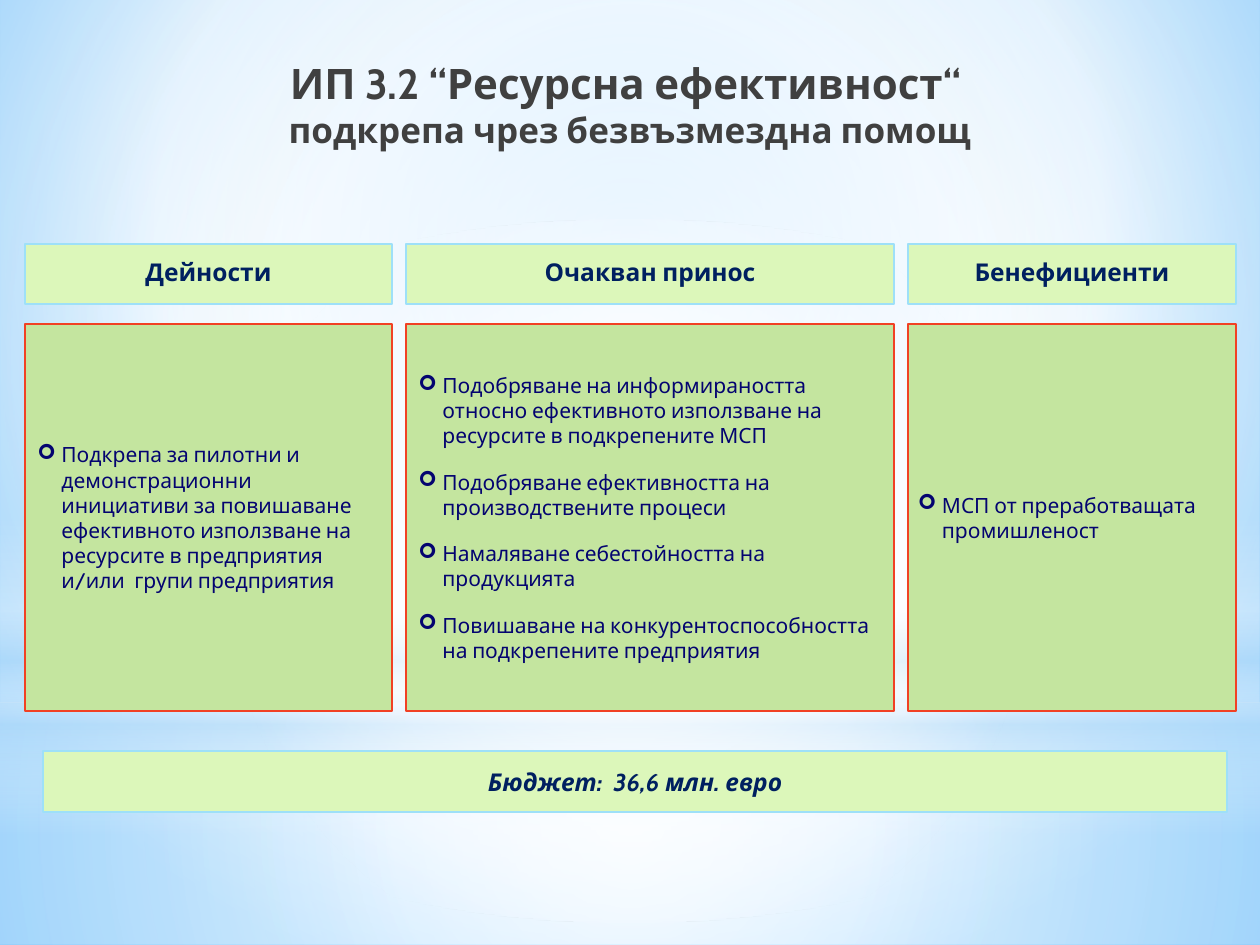
import pptx
import pptx.util
import pptx.oxml
import pptx.oxml.ns
import pptx.dml.color
import pptx.enum.shapes
import pptx.enum.text

PX = 7257  # EMU per px, 126 px to the inch
FONT = "Cabin"
Pt = pptx.util.Pt
hue = pptx.dml.color.RGBColor.from_string
kinds = pptx.enum.shapes.MSO_SHAPE
MID = pptx.enum.text.MSO_ANCHOR.MIDDLE
align = pptx.enum.text.PP_ALIGN
NS = pptx.oxml.ns.nsdecls("a")


def blend(stops, to=None):
    """Gradient fill from (position, colour, opacity); radial if to is given."""
    marks = "".join(
        f'<a:gs pos="{pos * 1000}"><a:srgbClr val="{tint}">'
        f'<a:alpha val="{part * 1000}"/></a:srgbClr></a:gs>'
        for pos, tint, part in stops)
    way = '<a:lin ang="5400000" scaled="0"/>'
    if to:
        rect = " ".join(f'{side}="{n * 1000}"' for side, n in zip("ltrb", to))
        way = f'<a:path path="circle"><a:fillToRect {rect}/></a:path>'
    return pptx.oxml.parse_xml(
        f'<a:gradFill {NS} rotWithShape="1"><a:gsLst>{marks}</a:gsLst>{way}</a:gradFill>')


def box(area, fill, edge, width, lines, font, para, pads=()):
    """Filled rectangle with one paragraph for each line."""
    shape = slide.shapes.add_shape(kinds.RECTANGLE, *[n * PX for n in area])
    shape.shadow.inherit = False
    shape.fill.solid()
    shape.fill.fore_color.rgb = hue(fill)
    shape.line.color.rgb = hue(edge)
    shape.line.width = Pt(width)
    frame = shape.text_frame
    frame.word_wrap = True
    frame.vertical_anchor = MID
    for name, pad in pads:
        setattr(frame, name, pad * PX)
    for i, line in enumerate(lines):
        p = frame.add_paragraph() if i else frame.paragraphs[0]
        run = p.add_run()
        run.text = line
        run.font.color.rgb = hue(font["tint"])
        for name, value in font["set"].items():
            setattr(run.font, name, value)
        for name, value in para.items():
            setattr(p, name, value)
    return shape


deck = pptx.Presentation()
deck.slide_width, deck.slide_height = 1260 * PX, 945 * PX
slide = deck.slides.add_slide(deck.slide_layouts[5])

# Background
back = slide.background.fill
back.solid()
back.fore_color.rgb = hue("FFFFFF")
solid = slide.element.find(".//" + pptx.oxml.ns.qn("a:solidFill"))
solid.getparent().replace(solid, blend(
    [(0, "9ED5FF", 100), (60, "FFFFFF", 100), (100, "5BB9FF", 100)], (20, 10, 20, 60)))

# Soft light over the background
mid = (50, 50, 50, 50)
glows = [
    (kinds.RECTANGLE, 703, 242, mid,
     [(0, "FFFFFF", 91), (37, "FFFFFF", 76), (100, "B4DCFA", 79)]),
    (kinds.RECTANGLE, 0, 703, mid,
     [(0, "FFFFFF", 89), (48, "FFFFFF", 62), (100, "B4DCFA", 79)]),
    (kinds.RECTANGLE, 519, 315, None,
     [(0, "FFFFFF", 0), (29, "FFFFFF", 30), (45, "B4DCFA", 40),
      (55, "FFFFFF", 26), (65, "B4DCFA", 60), (100, "FFFFFF", 0)]),
    (kinds.OVAL, 220, 703, mid, [(0, "FFFFFF", 100), (56, "FFFFFF", 0)]),
]
for kind, top, high, to, stops in glows:
    glow = slide.shapes.add_shape(kind, 0, top * PX, 1260 * PX, high * PX)
    glow.shadow.inherit = False
    glow.line.fill.background()
    geom = glow.element.spPr.find(pptx.oxml.ns.qn("a:prstGeom"))
    geom.addnext(blend(stops, to))

# Title, brought in front of the light
title = slide.shapes.title
title.left, title.top, title.width, title.height = 0, 45 * PX, 1260 * PX, 118 * PX
title.element.getparent().append(title.element)
title.text_frame.vertical_anchor = MID
head = title.text_frame.paragraphs[0]
head.alignment = align.CENTER
for text, size in [("ИП 3.2 “Ресурсна ефективност“ ", 24),
                   ("подкрепа чрез безвъзмездна помощ", 20)]:
    if head.runs:
        head.add_line_break()
    run = head.add_run()
    run.text = text
    run.font.color.rgb = hue("404040")
    for name, value in {"name": FONT, "size": Pt(size), "bold": True}.items():
        setattr(run.font, name, value)

# Text styles
bold = {"tint": "002060", "set": {"name": FONT, "size": Pt(14), "bold": True}}
slant = {"tint": "002060", "set": {**bold["set"], "italic": True}}
plain = {"tint": "040470", "set": {"name": FONT, "size": Pt(12)}}

# Columns: width, heading, points, space before, insets
cols = [
    (367, "Дейности",
     ["Подкрепа за пилотни и демонстрационни инициативи за повишаване ефективното "
      "използване на ресурсите в предприятия и/или  групи предприятия"], 0, []),
    (488, "Очакван принос",
     ["Подобряване на информираността относно ефективното използване на ресурсите "
      "в подкрепените МСП",
      "Подобряване ефективността на производствените процеси",
      "Намаляване себестойността на продукцията",
      "Повишаване на конкурентоспособността на подкрепените предприятия"],
     6, [("margin_right", 5)]),
    (328, "Бенефициенти", ["МСП от преработващата промишленост"],
     0, [("margin_left", 10), ("margin_right", 0)]),
]
left, gap = 25, 14
for wide, name, points, before, pads in cols:
    box((left, 244, wide, 60), "DCF7BA", "9EE0F8", 1.25, [name], bold,
        {"alignment": align.CENTER, "line_spacing": 0.9})
    body = box((left, 324, wide, 387), "C4E59F", "F14124", 1, points, plain,
               {"alignment": align.LEFT, "space_before": Pt(before),
                "space_after": Pt(6)}, pads)
    for p in body.text_frame.paragraphs:
        props = p._p.get_or_add_pPr()
        props.set("marL", str(24 * PX))
        props.set("indent", str(-24 * PX))
        for tag in ('buFont {} typeface="Wingdings"', 'buChar {} char="➢"'):
            props.append(pptx.oxml.parse_xml(f"<a:{tag.format(NS)}/>"))
    left += wide + gap

# Budget
box((43, 751, 1184, 61), "DCF7BA", "9EE0F8", 1.25, ["Бюджет:  36,6 млн. евро"], slant,
    {"alignment": align.CENTER, "space_before": Pt(6)})

deck.save("out.pptx")
